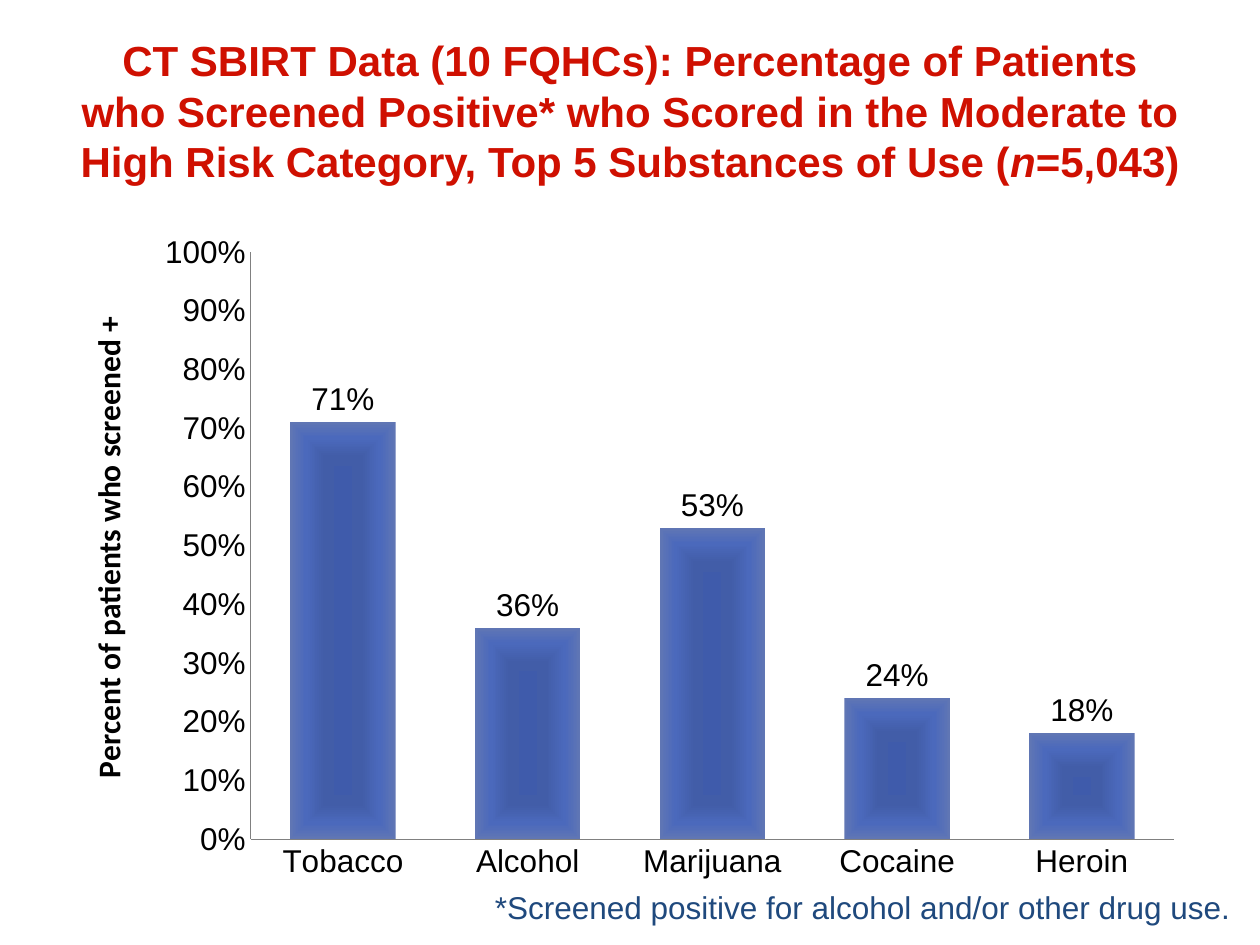
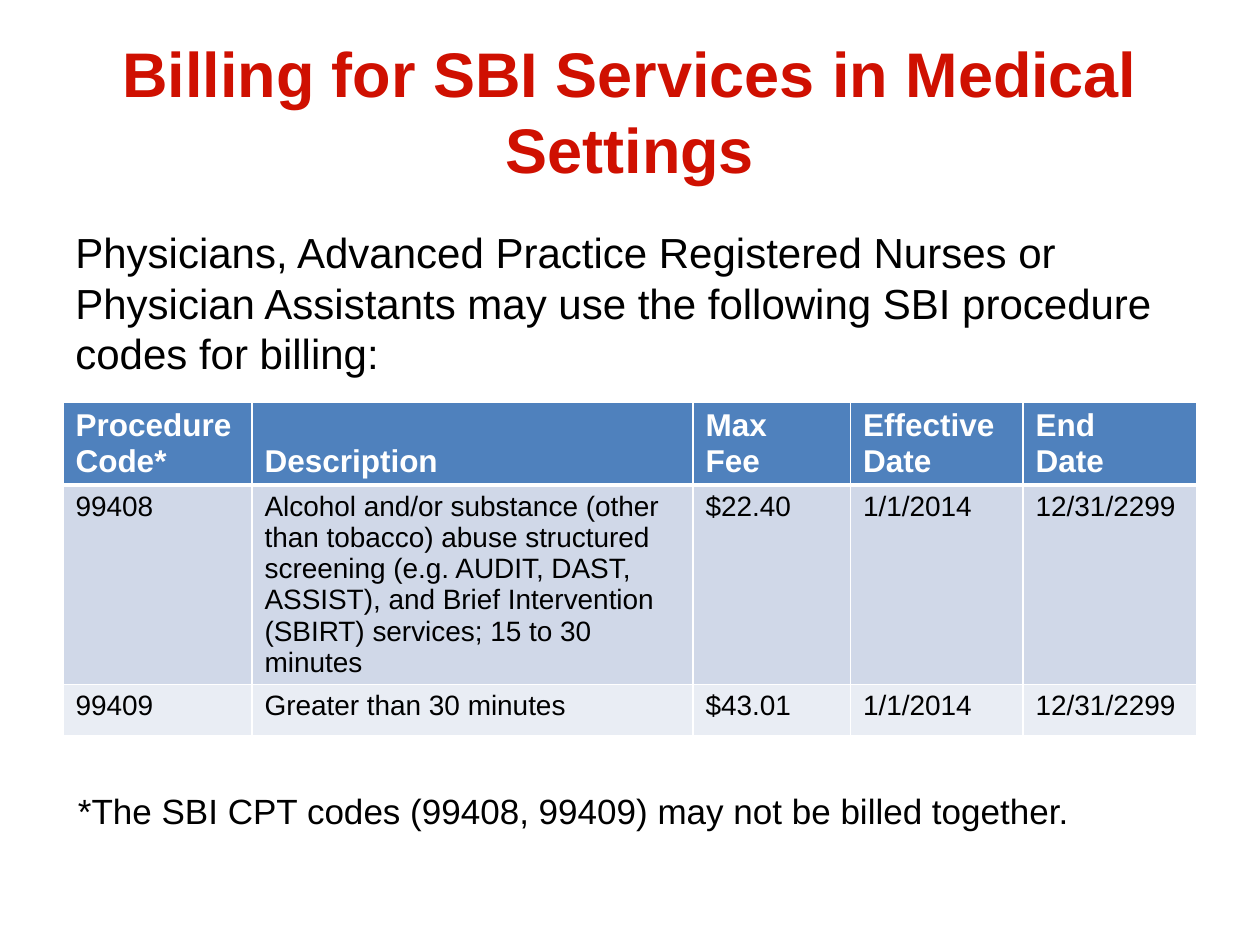
"""Build two slides on SBIRT screening results and billing codes."""
from lxml import etree
from pptx import Presentation
from pptx.chart.data import CategoryChartData
from pptx.dml.color import RGBColor
from pptx.enum.chart import XL_CHART_TYPE, XL_LABEL_POSITION, XL_TICK_MARK
from pptx.enum.text import MSO_ANCHOR, MSO_AUTO_SIZE, PP_ALIGN
from pptx.oxml import parse_xml
from pptx.oxml.ns import nsdecls, qn
from pptx.util import Inches, Pt

COLUMN = XL_CHART_TYPE.COLUMN_CLUSTERED
OUTSIDE = XL_LABEL_POSITION.OUTSIDE_END
NO_TICK = XL_TICK_MARK.NONE
TOP, MIDDLE, BOTTOM = MSO_ANCHOR.TOP, MSO_ANCHOR.MIDDLE, MSO_ANCHOR.BOTTOM
NO_FIT = MSO_AUTO_SIZE.NONE
LEFT, CENTER = PP_ALIGN.LEFT, PP_ALIGN.CENTER

RED = RGBColor(0xCF, 0x10, 0x01)
NAVY = RGBColor(0x1F, 0x49, 0x7D)
BLACK = RGBColor(0, 0, 0)
WHITE = RGBColor(0xFF, 0xFF, 0xFF)
GREY = RGBColor(0x80, 0x80, 0x80)
HEADER_BLUE = RGBColor(0x4F, 0x81, 0xBD)
BAND_DARK = RGBColor(0xD0, 0xD8, 0xE8)
BAND_LIGHT = RGBColor(0xE9, 0xED, 0xF4)
BAR_STOPS = [
    (0, RGBColor(0x3F, 0x5B, 0xAB)),
    (34, RGBColor(0x42, 0x5D, 0xA8)),
    (70, RGBColor(0x4B, 0x69, 0xBC)),
    (100, RGBColor(0x60, 0x76, 0xB4)),
]
FONT = "Arial"
AXIS_TITLE_FONT = "Calibri"

CHART_PLACE = (0.5, 1.75, 9, 5.33)
SCREENED = {"Tobacco": 0.71, "Alcohol": 0.36, "Marijuana": 0.53,
            "Cocaine": 0.24, "Heroin": 0.18}
CODE_ROWS = [
    ["Procedure Code*", "Description", "Max\vFee", "Effective Date", "End\vDate"],
    ["99408",
     "Alcohol and/or substance (other than tobacco) abuse structured screening "
     "(e.g. AUDIT, DAST, ASSIST), and Brief Intervention (SBIRT) services; "
     "15 to 30 minutes",
     "$22.40", "1/1/2014", "12/31/2299"],
    ["99409", "Greater than 30 minutes", "$43.01", "1/1/2014", "12/31/2299"],
]
COLUMN_WIDTHS = [1.5, 3.5, 1.25, 1.37, 1.38]
ROW_HEIGHTS = [0.65, 1.58, 0.41]


def style_font(font, size, color, bold=False, name=FONT):
    """Set the face, size, colour and weight of a font."""
    font.name, font.size, font.bold = name, Pt(size), bold
    font.color.rgb = color


def style_text(frame, size, color, bold=False, align=LEFT):
    """Format every run in a text frame."""
    for para in frame.paragraphs:
        para.alignment = align
        for span in para.runs:
            style_font(span.font, size, color, bold)


def add_page(deck, size, *title_parts):
    """Add a titled page; every second title part is italic."""
    page = deck.slides.add_slide(deck.slide_layouts[5])
    title = page.shapes.title
    title.left, title.top = Inches(0.5), Inches(0.25)
    title.width, title.height = Inches(9), Inches(1.25)
    frame = title.text_frame
    frame.auto_size, frame.vertical_anchor = NO_FIT, MIDDLE
    for index, part in enumerate(title_parts):
        span = frame.paragraphs[0].add_run()
        span.text = part
        span.font.italic = index % 2 == 1
    style_text(frame, size, RED, True, CENTER)
    return page


def add_note(page, text, place, size, color=BLACK):
    """Add a plain text box at left, top, width, height."""
    box = page.shapes.add_textbox(*map(Inches, place))
    box.text_frame.word_wrap = True
    box.text_frame.text = text
    style_text(box.text_frame, size, color)


def set_layout(parent, after, x, y, width=None, height=None):
    """Place a chart part, given in slide inches, at its layout position."""
    for layout in parent.findall(qn("c:layout")):
        parent.remove(layout)
    left, top, full_width, full_height = CHART_PLACE
    entries = [("xMode", "edge"), ("yMode", "edge"),
               ("x", (x - left) / full_width), ("y", (y - top) / full_height)]
    if width:
        entries = [("layoutTarget", "inner"), *entries,
                   ("w", width / full_width), ("h", height / full_height)]
    layout = parse_xml(f"<c:layout {nsdecls('c')}><c:manualLayout/></c:layout>")
    for tag, value in entries:
        etree.SubElement(layout[0], qn(f"c:{tag}")).set("val", str(value))
    parent.insert(after, layout)


def fill_bars(series):
    """Give bars a gradient that runs from the centre to the edges."""
    stops = "".join(
        f'<a:gs pos="{place * 1000}"><a:srgbClr val="{color}"/></a:gs>'
        for place, color in BAR_STOPS)
    gradient = parse_xml(
        f'<a:gradFill {nsdecls("a")} rotWithShape="1"><a:gsLst>{stops}</a:gsLst>'
        '<a:path path="rect"><a:fillToRect l="50000" t="50000" r="50000" b="50000"/>'
        '</a:path></a:gradFill>')
    series.format.fill.solid()
    properties = series.format.fill._xPr
    properties.replace(properties.find(qn("a:solidFill")), gradient)


def style_axis(axis):
    """Give an axis a thin grey line without ticks or gridlines."""
    axis.major_tick_mark = axis.minor_tick_mark = NO_TICK
    axis.has_major_gridlines = False
    axis.format.line.color.rgb = GREY
    axis.format.line.width = Pt(0.25)
    style_font(axis.tick_labels.font, 18, BLACK)


def add_substance_chart(page):
    """Add the column chart of screened patients by substance."""
    data = CategoryChartData(number_format="0%")
    data.categories = list(SCREENED)
    data.add_series("Series 1", list(SCREENED.values()))
    chart = page.shapes.add_chart(COLUMN, *map(Inches, CHART_PLACE), data).chart
    chart.has_legend = chart.has_title = False
    style_font(chart.font, 18, BLACK)
    set_layout(chart._chartSpace.chart.plotArea, 0, 1.99, 2, 7.33, 4.66)

    style_axis(chart.category_axis)
    scale = chart.value_axis
    style_axis(scale)
    scale.minimum_scale, scale.maximum_scale, scale.major_unit = 0, 1, 0.1
    scale.tick_labels.number_format = "0%"
    scale.tick_labels.number_format_is_linked = False
    frame = scale.axis_title.text_frame
    frame.text = "Percent of patients who screened +"
    style_font(frame.paragraphs[0].runs[0].font, 18, BLACK, True, AXIS_TITLE_FONT)
    set_layout(scale.axis_title._element, 1, 0.64, 2.47)

    plot = chart.plots[0]
    plot.gap_width, plot.vary_by_categories = 75, False
    fill_bars(plot.series[0])
    plot.has_data_labels = True
    labels = plot.data_labels
    labels.show_value, labels.position = True, OUTSIDE
    labels.number_format, labels.number_format_is_linked = "0%", False
    style_font(labels.font, 18, BLACK)


def set_borders(cell, top, bottom):
    """Draw white cell borders, with top and bottom widths in points."""
    properties = cell._tc.get_or_add_tcPr()
    for side, width in (("L", 1), ("R", 1), ("T", top), ("B", bottom)):
        properties.append(parse_xml(
            f'<a:ln{side} {nsdecls("a")} w="{Pt(width)}"><a:solidFill>'
            f'<a:srgbClr val="{WHITE}"/></a:solidFill></a:ln{side}>'))


def add_code_table(page):
    """Add the table of billing procedure codes."""
    place = map(Inches, (0.5, 3.19, sum(COLUMN_WIDTHS), sum(ROW_HEIGHTS)))
    table = page.shapes.add_table(len(CODE_ROWS), len(COLUMN_WIDTHS), *place).table
    for column, width in zip(table.columns, COLUMN_WIDTHS):
        column.width = Inches(width)
    looks = [
        (HEADER_BLUE, 18, WHITE, True, BOTTOM, 1, 3),
        (BAND_DARK, 16, BLACK, False, TOP, 3, 1),
        (BAND_LIGHT, 16, BLACK, False, TOP, 1, 1),
    ]
    for row, height, texts, look in zip(table.rows, ROW_HEIGHTS, CODE_ROWS, looks):
        fill, size, color, bold, anchor, top, bottom = look
        row.height = Inches(height)
        for cell, text in zip(row.cells, texts):
            cell.text_frame.text = text
            style_text(cell.text_frame, size, color, bold)
            cell.vertical_anchor = anchor
            set_borders(cell, top, bottom)
            cell.fill.solid()
            cell.fill.fore_color.rgb = fill


def main():
    """Build and save the deck."""
    deck = Presentation()
    deck.slide_width, deck.slide_height = Inches(10), Inches(7.5)

    page = add_page(
        deck, 24,
        "CT SBIRT Data (10 FQHCs): Percentage of Patients who Screened Positive* "
        "who Scored in the Moderate to High Risk Category, Top 5 Substances of Use (",
        "n", "=5,043)")
    add_substance_chart(page)
    add_note(page, "*Screened positive for alcohol and/or other drug use.",
             (3.83, 7, 6.17, 0.4), 18, NAVY)

    page = add_page(deck, 36, "Billing for SBI Services in Medical Settings")
    add_code_table(page)
    add_note(page,
             "Physicians, Advanced Practice Registered Nurses or Physician Assistants "
             "may use the following SBI procedure codes for billing:",
             (0.5, 1.75, 9, 1.31), 24)
    add_note(page, "*The SBI CPT codes (99408, 99409) may not be billed together.",
             (0.52, 6.22, 8.42, 0.44), 20)
    deck.save("out.pptx")


if __name__ == "__main__":
    main()
